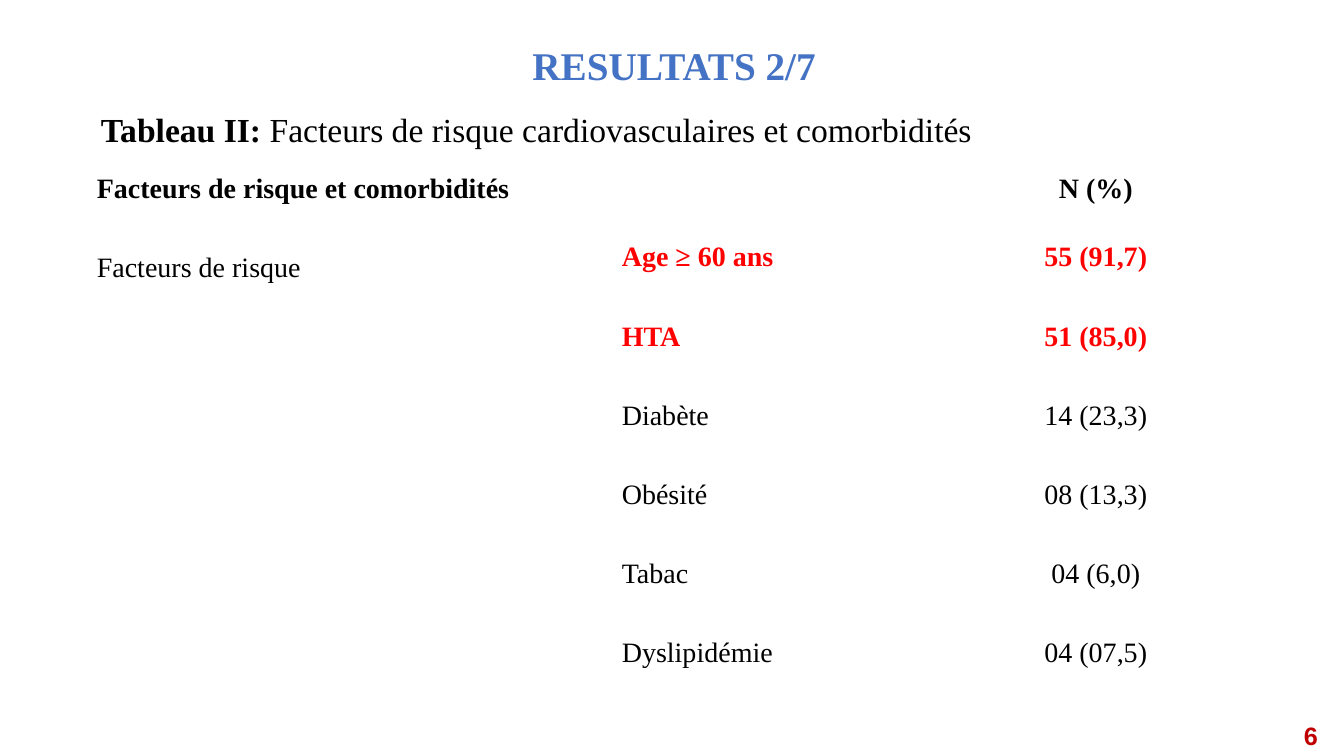
from lxml import etree
from pptx import Presentation
from pptx import util as u
from pptx.dml.color import RGBColor
from pptx.enum import text as t
from pptx.oxml.ns import qn

BLUE = RGBColor(0x44, 0x72, 0xC4)
BLACK = RGBColor(0, 0, 0)
RED = RGBColor(0xFF, 0, 0)
DARK_RED = RGBColor(0xC0, 0, 0)
WHITE = RGBColor(0xFF, 0xFF, 0xFF)

HEADINGS = ("Facteurs de risque et comorbidités", "", "N (%)")
RISK_FACTORS = [
    ("Age ≥ 60 ans", "55 (91,7)"),
    ("HTA", "51 (85,0)"),
    ("Diabète", "14 (23,3)"),
    ("Obésité", "08 (13,3)"),
    ("Tabac", "04 (6,0)"),
    ("Dyslipidémie", "04 (07,5)"),
]
FREQUENT = ("Age ≥ 60 ans", "HTA")


def write(paragraph, words, size=20, color=BLACK, bold=False,
          font="Times New Roman", align=None, spacing=None, before=None, hanging=None):
    """Add a formatted run and set the format of its paragraph."""
    run = paragraph.add_run()
    run.text = words
    run.font.size, run.font.name, run.font.bold = u.Pt(size), font, bold
    run.font.color.rgb = color
    if align is not None:
        paragraph.alignment = align
    if spacing is not None:
        paragraph.line_spacing = spacing
    if before is not None:
        paragraph.space_before = u.Pt(before)
    if hanging is not None:
        properties = paragraph._p.get_or_add_pPr()
        properties.set("marL", str(u.Cm(hanging)))
        properties.set("indent", str(-u.Cm(hanging)))


class ResultsSlide:
    def __init__(self, deck):
        self.slide = deck.slides.add_slide(deck.slide_layouts[1])

    def place(self, holder, left, top, width, height, anchor):
        holder.left, holder.top = u.Cm(left), u.Cm(top)
        holder.width, holder.height = u.Cm(width), u.Cm(height)
        frame = holder.text_frame
        frame.auto_size = t.MSO_AUTO_SIZE.NONE
        frame.vertical_anchor = anchor
        return frame.paragraphs[0]

    def title(self, words):
        heading = self.place(self.slide.shapes.title, 2.34, 0.89, 29.29, 1.47,
                             t.MSO_ANCHOR.BOTTOM)
        write(heading, words, size=28, color=BLUE, bold=True,
              align=t.PP_ALIGN.CENTER, spacing=0.9)

    def caption(self, label, words):
        caption = self.place(self.slide.placeholders[1], 2.29, 2.72, 29.29, 1.47,
                             t.MSO_ANCHOR.TOP)
        write(caption, label, size=24, bold=True)
        write(caption, words, size=24, align=t.PP_ALIGN.LEFT,
              spacing=0.9, before=10, hanging=0)
        etree.SubElement(caption._p.get_or_add_pPr(), qn("a:buNone"))

    def table(self, row_count, widths):
        grid = self.slide.shapes.add_table(
            row_count, len(widths), u.Cm(2.34), u.Cm(4.19),
            u.Cm(sum(widths)), u.Cm(13.97)).table
        for column, width in zip(grid.columns, widths):
            column.width = u.Cm(width)
        for cell in grid.iter_cells():
            cell.margin_left = cell.margin_right = u.Cm(0.1)
            self.borders(cell)
            cell.fill.solid()
            cell.fill.fore_color.rgb = WHITE
        return grid

    def borders(self, cell):
        properties = cell._tc.get_or_add_tcPr()
        for side in ("lnL", "lnR", "lnT", "lnB"):
            line = etree.SubElement(properties, qn("a:" + side), w=str(u.Pt(0.96)))
            fill = etree.SubElement(line, qn("a:solidFill"))
            etree.SubElement(fill, qn("a:srgbClr"), val=str(WHITE))

    def page_number(self, number):
        box = self.slide.shapes.add_textbox(u.Cm(32.61), u.Cm(18.03), u.Cm(0.86), u.Cm(1.02))
        box.text_frame.word_wrap = False
        box.text_frame.auto_size = t.MSO_AUTO_SIZE.SHAPE_TO_FIT_TEXT
        write(box.text_frame.paragraphs[0], number, size=18, color=DARK_RED,
              bold=True, font="Arial")


def main():
    deck = Presentation()
    deck.slide_width, deck.slide_height = u.Cm(33.87), u.Cm(19.05)
    results = ResultsSlide(deck)

    # Title and table caption
    results.title("RESULTATS 2/7")
    results.caption("Tableau II: ", "Facteurs de risque cardiovasculaires et comorbidités")

    # Table heading and row group
    grid = results.table(len(RISK_FACTORS) + 1, (13.23, 8.03, 8.03))
    alignments = (t.PP_ALIGN.LEFT, t.PP_ALIGN.LEFT, t.PP_ALIGN.CENTER)
    for column, heading in enumerate(HEADINGS):
        if heading:
            write(grid.cell(0, column).text_frame.paragraphs[0], heading,
                  bold=True, align=alignments[column], spacing=1.07)
    write(grid.cell(1, 0).text_frame.paragraphs[0], "Facteurs de risque", spacing=1.07)

    # Risk factors, the frequent ones in red
    for row, factor in enumerate(RISK_FACTORS, start=1):
        frequent = factor[0] in FREQUENT
        for column, words in enumerate(factor, start=1):
            write(grid.cell(row, column).text_frame.paragraphs[0], words,
                  color=RED if frequent else BLACK, bold=frequent,
                  align=alignments[column], spacing=u.Pt(16), hanging=1.24)

    # Page number
    results.page_number("6")
    deck.save("out.pptx")


if __name__ == "__main__":
    main()
